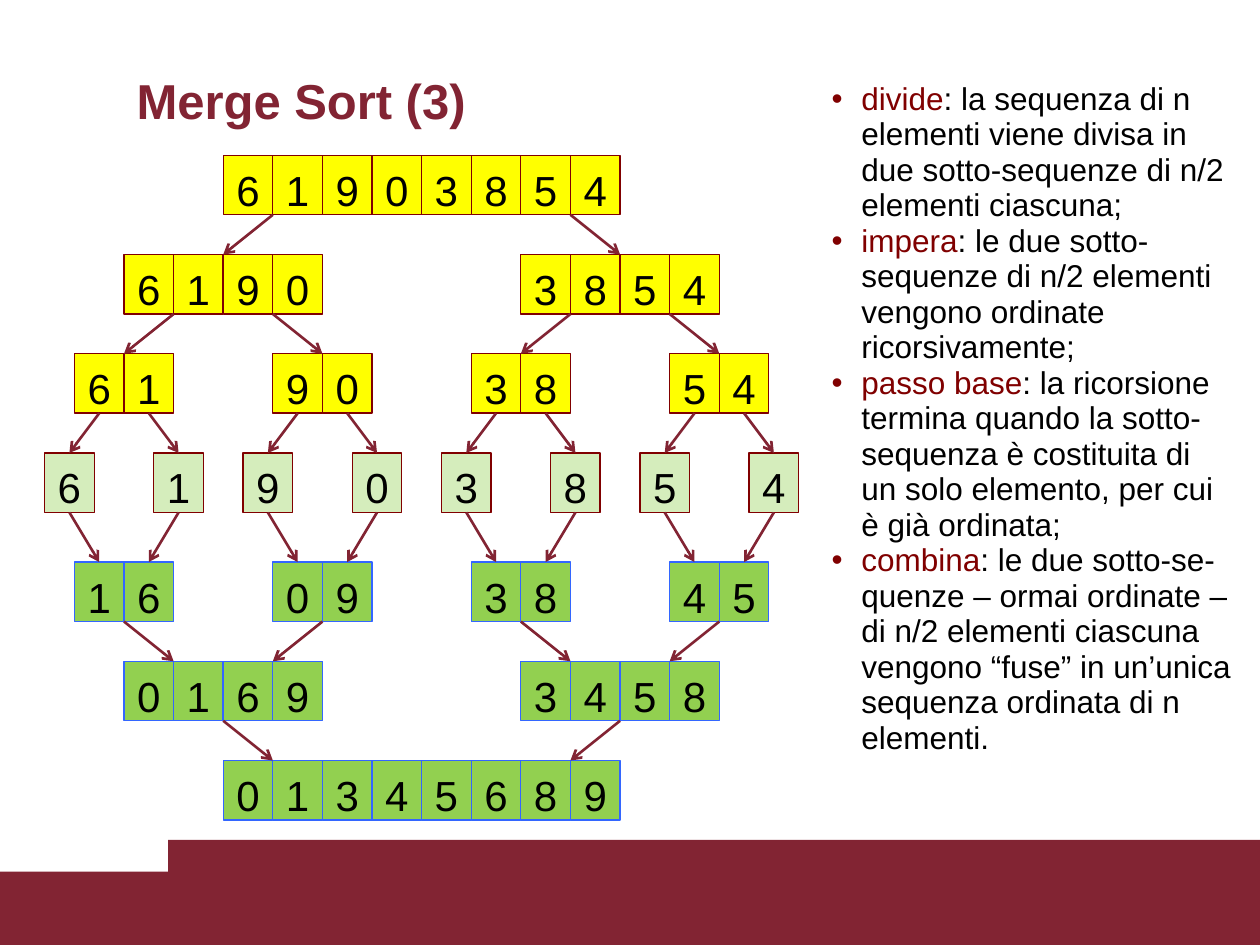
from lxml import etree
from pptx import Presentation
from pptx.dml.color import RGBColor
from pptx.enum.shapes import MSO_CONNECTOR, MSO_SHAPE
from pptx.enum.text import MSO_ANCHOR, MSO_AUTO_SIZE, PP_ALIGN
from pptx.oxml.ns import qn
from pptx.util import Cm, Pt

RECT = MSO_SHAPE.RECTANGLE
STRAIGHT = MSO_CONNECTOR.STRAIGHT
MIDDLE, BOTTOM, TOP = MSO_ANCHOR.MIDDLE, MSO_ANCHOR.BOTTOM, MSO_ANCHOR.TOP
LEFT, CENTER = PP_ALIGN.LEFT, PP_ALIGN.CENTER
NO_FIT = MSO_AUTO_SIZE.NONE

FONT = "Arial"
WINE, DARK_RED, BLUE, BLACK = "822433", "800000", "3366FF", "000000"
YELLOW, GREEN = "FFFF00", "92D050"
CELL_W, CELL_H = 1, 1.2
SPLIT, LEAF, MERGED = (YELLOW, DARK_RED, 100), (GREEN, DARK_RED, 38), (GREEN, BLUE, 100)

ONE, TWO, FOUR = [8.5], [4.5, 12.5], [2.5, 6.5, 10.5, 14.5]
EIGHT = [c + d for c in FOUR for d in (-1.1, 1.1)]
LEVELS = [
    (3.13, ONE, "61903854", SPLIT),
    (5.13, TWO, "6190 3854", SPLIT),
    (7.13, FOUR, "61 90 38 54", SPLIT),
    (9.13, EIGHT, "6 1 9 0 3 8 5 4", LEAF),
    (11.33, FOUR, "16 09 38 45", MERGED),
    (13.33, TWO, "0169 3458", MERGED),
    (15.33, ONE, "01345689", MERGED),
]
STEPS = [
    ("divide", ": la sequenza di n elementi viene divisa in due sotto-sequenze di n/2 elementi ciascuna;"),
    ("impera", ": le due sotto-sequenze di n/2 elementi vengono ordinate ricorsivamente;"),
    ("passo base", ": la ricorsione termina quando la sotto-sequenza è costituita di un solo elemento, "
     "per cui è già ordinata;"),
    ("combina", ": le due sotto-se-quenze – ormai ordinate – di n/2 elementi ciascuna vengono “fuse” "
     "in un’unica sequenza ordinata di n elementi."),
]


def rgb(color):
    return RGBColor.from_string(color)


def add_run(p, text, size, color, bold=False):
    r = p.add_run()
    r.text = text
    r.font.name = FONT
    r.font.size = Pt(size)
    r.font.bold = bold
    r.font.color.rgb = rgb(color)


def place(sp, left, top, width, height):
    sp.left, sp.top, sp.width, sp.height = Cm(left), Cm(top), Cm(width), Cm(height)


def add_rect(s, left, top, width, height, fill, line=None, alpha=100):
    sp = s.shapes.add_shape(RECT, Cm(left), Cm(top), Cm(width), Cm(height))
    sp.shadow.inherit = False
    sp.fill.solid()
    sp.fill.fore_color.rgb = rgb(fill)
    if alpha < 100:
        clr = sp.fill._xPr.find(qn("a:solidFill"))[0]
        etree.SubElement(clr, qn("a:alpha")).set("val", str(alpha * 1000))
    if line:
        sp.line.color.rgb = rgb(line)
        sp.line.width = Pt(0.75)
    else:
        sp.line.fill.background()
    return sp


def add_cell(s, left, top, digit, style):
    sp = add_rect(s, left, top, CELL_W, CELL_H, *style)
    tf = sp.text_frame
    tf.vertical_anchor = MIDDLE
    tf.margin_left = tf.margin_right = tf.margin_bottom = 0
    tf.margin_top = Cm(0.18)
    p = tf.paragraphs[0]
    p.alignment = CENTER
    add_run(p, digit, 24, BLACK)


def add_level(s, top, centers, sequences, style):
    for center, digits in zip(centers, sequences.split()):
        left = center - len(digits) * CELL_W / 2
        for i, digit in enumerate(digits):
            add_cell(s, left + i * CELL_W, top, digit, style)


def add_arrow(s, x1, y1, x2, y2):
    c = s.shapes.add_connector(STRAIGHT, Cm(x1), Cm(y1), Cm(x2), Cm(y2))
    c.line.color.rgb = rgb(WINE)
    c.line.width = Pt(1.5)
    etree.SubElement(c.line._get_or_add_ln(), qn("a:tailEnd")).set("type", "arrow")
    etree.SubElement(c._element.spPr, qn("a:effectLst"))


def add_level_arrows(s, upper, lower):
    splitting = len(upper[1]) < len(lower[1])
    wide, narrow = (upper, lower) if splitting else (lower, upper)
    width = len(wide[2].split()[0]) * CELL_W
    offset = width / 2 - min(CELL_W, width / 4)
    y1, y2 = upper[0] + CELL_H, lower[0]
    for i, center in enumerate(narrow[1]):
        joint = wide[1][i // 2] + (offset if i % 2 else -offset)
        x1, x2 = (joint, center) if splitting else (center, joint)
        add_arrow(s, x1, y1, x2, y2)


def fill_title(sp):
    place(sp, 2.5, 1.25, 21, 1.4)
    tf = sp.text_frame
    tf.auto_size = NO_FIT
    tf.vertical_anchor = BOTTOM
    tf.margin_bottom = Cm(0.05)
    p = tf.paragraphs[0]
    p.alignment = LEFT
    add_run(p, "Merge Sort (3)", 28, WINE, True)


def fill_steps(sp):
    place(sp, 16.51, 1.52, 8.62, 15.5)
    tf = sp.text_frame
    tf.auto_size = NO_FIT
    tf.vertical_anchor = TOP
    for i, (term, text) in enumerate(STEPS):
        p = tf.add_paragraph() if i else tf.paragraphs[0]
        p.line_spacing = 0.94
        p.space_before = Pt(0)
        pPr = p._p.get_or_add_pPr()
        pPr.set("marL", str(Cm(0.6)))
        pPr.set("indent", str(Cm(-0.6)))
        add_run(p, term, 18, DARK_RED)
        add_run(p, text, 18, BLACK)


def main():
    prs = Presentation()
    prs.slide_width, prs.slide_height = Cm(25.4), Cm(19.05)
    s = prs.slides.add_slide(prs.slide_layouts[1])
    add_rect(s, 0, 17.57, 25.4, 1.48, WINE)
    add_rect(s, 3.39, 16.93, 22.01, 2.12, WINE)
    fill_title(s.shapes.title)
    fill_steps(s.placeholders[1])
    for level in LEVELS:
        add_level(s, *level)
    for upper, lower in zip(LEVELS, LEVELS[1:]):
        add_level_arrows(s, upper, lower)
    prs.save("out.pptx")


if __name__ == "__main__":
    main()
